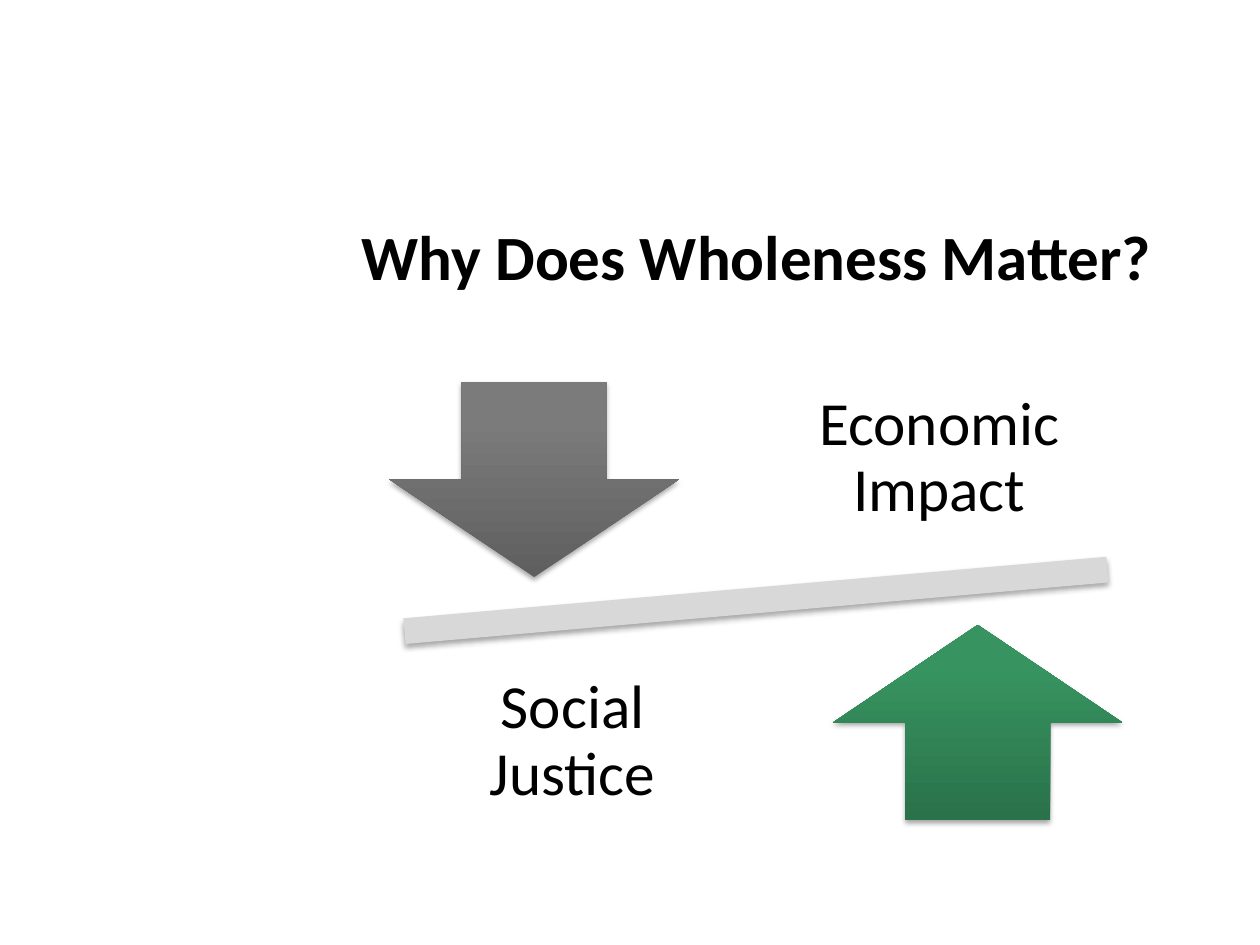
from copy import deepcopy

from lxml import etree
from pptx import Presentation, util as u
from pptx.dml.color import RGBColor
from pptx.enum import shapes, text
from pptx.oxml import parse_xml
from pptx.oxml.ns import nsdecls, qn

# Content
TITLE = "Why Does Wholeness Matter?"
TITLE_BOX = (2.17, 1.5, 7.67, 1.05)
BEAM_BOX, BEAM_TILT = (2.19, 4.33, 7.62, 0.87), -5
ARROW_SIZE, LABEL_SIZE = (2.3, 1.55), (2.45, 1.62)
SHAPE = shapes.MSO_SHAPE
ARROWS = [
    (SHAPE.DOWN_ARROW, (3.09, 3.03), "gray"),
    (SHAPE.UP_ARROW, (6.61, 4.96), "green"),
]
LABELS = [("Economic Impact", (6.23, 2.83)), ("Social Justice", (3.32, 5.08))]
COLORS = {"white": "FFFFFF", "black": "000000", "beam": "D8D8D8"}
GRADIENTS = {
    "gray": [(0, "5F5F5F"), (0.8, "7B7B7B"), (1, "7C7C7C")],
    "green": [(0, "2A724A"), (0.8, "379460"), (1, "369761")],
}


def rgb(name):
    return RGBColor.from_string(COLORS[name])


def inches(*values):
    return [u.Inches(v) for v in values]


def write(tf, words, size, bold=False):
    tf.word_wrap = True
    tf.vertical_anchor = text.MSO_ANCHOR.MIDDLE
    p = tf.paragraphs[0]
    p.alignment = text.PP_ALIGN.CENTER
    r = p.add_run()
    r.text = words
    font = {"name": "Calibri", "size": u.Pt(size), "bold": bold}
    for key, value in font.items():
        setattr(r.font, key, value)
    r.font.color.rgb = rgb("black")
    return p


def add_shadowed(s, kind, box):
    sp = s.shapes.add_shape(kind, *inches(*box))
    sp.line.fill.background()
    sp.shadow.inherit = False
    effects = sp._element.spPr.find(qn("a:effectLst"))
    effects.append(parse_xml(
        f'<a:outerShdw {nsdecls("a")} blurRad="{u.Pt(3.1)}" dist="{u.Pt(1.8)}" '
        'dir="5400000" rotWithShape="0"><a:srgbClr val="000000">'
        '<a:alpha val="35000"/></a:srgbClr></a:outerShdw>'))
    return sp


def fill_gradient(sp, stops):
    fill = sp.fill
    fill.gradient()
    fill.gradient_angle = 90
    stop_list = sp._element.spPr.find(".//" + qn("a:gsLst"))
    stop_list.append(deepcopy(stop_list[-1]))
    for stop, (position, color) in zip(fill.gradient_stops, stops):
        stop.position = position
        stop.color.rgb = RGBColor.from_string(color)


def main():
    prs = Presentation()
    prs.slide_width, prs.slide_height = inches(10, 7.5)
    s = prs.slides.add_slide(prs.slide_layouts[5])

    # Title on a translucent white panel
    title = s.shapes.title
    title.left, title.top, title.width, title.height = inches(*TITLE_BOX)
    title.fill.solid()
    title.fill.fore_color.rgb = rgb("white")
    panel_color = title._element.spPr.find(".//" + qn("a:srgbClr"))
    etree.SubElement(panel_color, qn("a:alpha"), val="25000")
    write(title.text_frame, TITLE, 36, bold=True)

    # Tilted beam
    beam = add_shadowed(s, SHAPE.MATH_MINUS, BEAM_BOX)
    beam.rotation = BEAM_TILT
    beam.fill.solid()
    beam.fill.fore_color.rgb = rgb("beam")

    # Opposing arrows
    for kind, corner, gradient in ARROWS:
        arrow = add_shadowed(s, kind, corner + ARROW_SIZE)
        fill_gradient(arrow, GRADIENTS[gradient])

    # Labels
    for words, corner in LABELS:
        tf = s.shapes.add_textbox(*inches(*corner, *LABEL_SIZE)).text_frame
        for side in ("left", "top", "right", "bottom"):
            setattr(tf, f"margin_{side}", u.Inches(0.26))
        write(tf, words, 35).line_spacing = 0.9

    prs.save("out.pptx")


if __name__ == "__main__":
    main()
